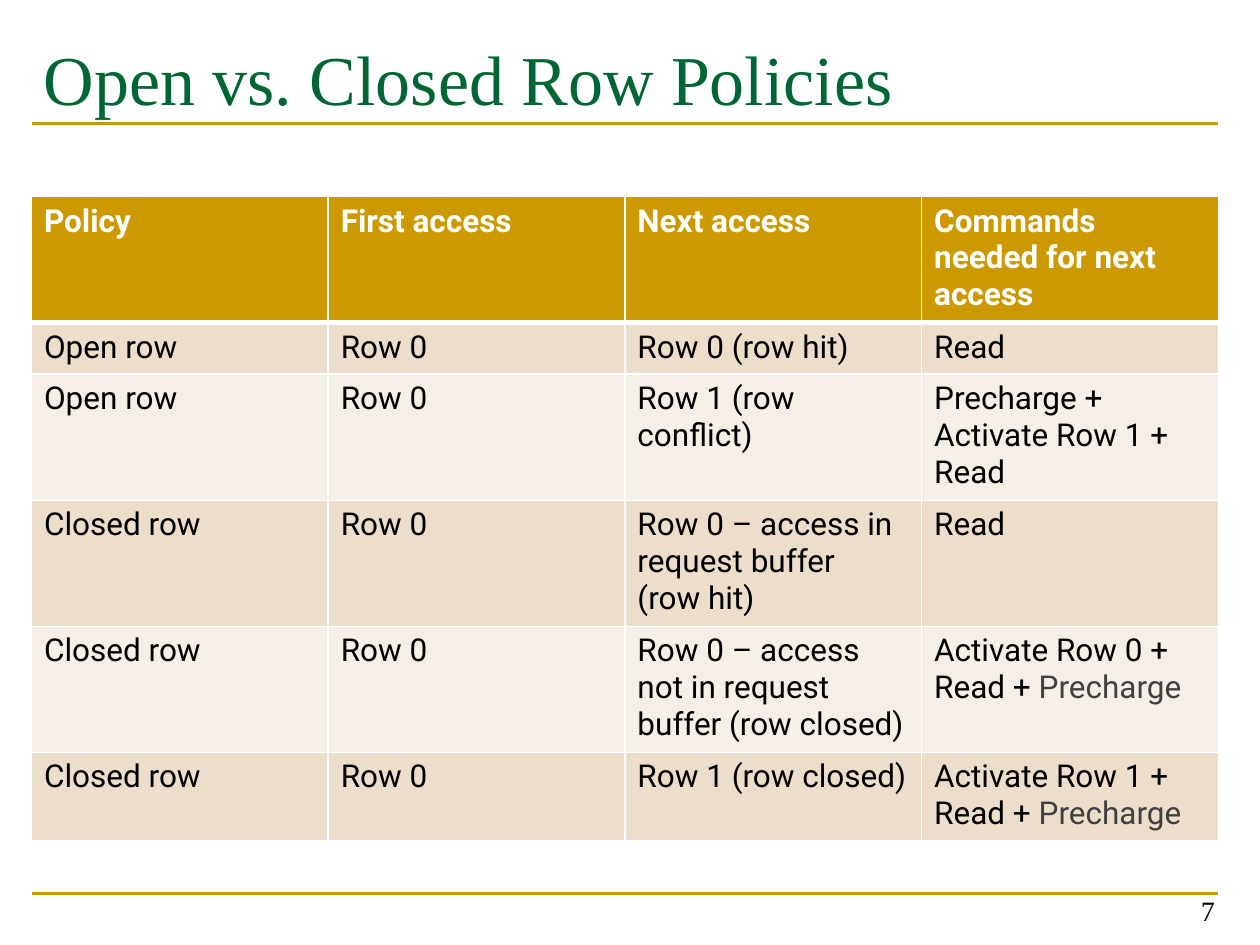
"""Build a slide with a table comparing open and closed row policies."""
from lxml import etree
from pptx import Presentation
from pptx.dml.color import RGBColor
from pptx.enum import shapes, text
from pptx.oxml import ns
from pptx.util import Inches, Pt

GOLD, GREEN, WHITE, BLACK, GRAY = "CC9900", "006633", "FFFFFF", "000000", "404040"
BANDS = ["ECDECB", "F6EFE7"]
LATE = "Precharge"


def style(font, name, size, color, bold=False):
    font.name, font.size, font.bold = name, Pt(size), bold
    font.color.rgb = RGBColor.from_string(color)


def edge(cell, side, width):
    line = etree.SubElement(cell._tc.get_or_add_tcPr(), ns.qn("a:" + side), w=str(Pt(width)))
    fill = etree.SubElement(line, ns.qn("a:solidFill"))
    etree.SubElement(fill, ns.qn("a:srgbClr"), val=WHITE)


deck = Presentation()
deck.slide_width, deck.slide_height = Inches(10), Inches(7.5)
slide = deck.slides.add_slide(deck.slide_layouts[6])

for y in (7.09, 0.98):
    rule = slide.shapes.add_connector(
        shapes.MSO_CONNECTOR.STRAIGHT, Inches(0.25), Inches(y), Inches(9.67), Inches(y))
    rule.line.color.rgb = RGBColor.from_string(GOLD)
    rule.line.width = Pt(1.5)
    etree.SubElement(rule._element.spPr, ns.qn("a:effectLst"))

labels = [
    ("Open vs. Closed Row Policies", (0.25, 0.17, 9.42, 1.17), 40, GREEN,
     text.PP_ALIGN.LEFT, text.MSO_ANCHOR.TOP, 0.11),
    ("7", (7.41, 6.91, 2.33, 0.5), 16, BLACK,
     text.PP_ALIGN.RIGHT, text.MSO_ANCHOR.BOTTOM, 0.05),
]
for words, place, size, color, align, anchor, top in labels:
    frame = slide.shapes.add_textbox(*map(Inches, place)).text_frame
    frame.word_wrap = True
    frame.vertical_anchor = anchor
    frame.margin_top = Inches(top)
    para = frame.paragraphs[0]
    para.text, para.alignment = words, align
    style(para.font, "Times New Roman", size, color)

rows = [
    ("Policy", "First access", "Next access", "Commands needed for next access"),
    ("Open row", "Row 0", "Row 0 (row hit)", "Read"),
    ("Open row", "Row 0", "Row 1 (row conflict)", "Precharge + Activate Row 1 +\nRead"),
    ("Closed row", "Row 0", "Row 0 – access in request buffer\n(row hit)", "Read"),
    ("Closed row", "Row 0", "Row 0 – access not in request buffer (row closed)",
     "Activate Row 0 + Read + "),
    ("Closed row", "Row 0", "Row 1 (row closed)", "Activate Row 1 + Read + "),
]
highs = [1, 0.41, 1, 1, 1, 0.7]
table = slide.shapes.add_table(
    len(rows), 4, Inches(0.25), Inches(1.56), Inches(9.42), Inches(sum(highs))).table

for r, (row, high) in enumerate(zip(rows, highs)):
    table.rows[r].height = Inches(high)
    head = r == 0
    for c, words in enumerate(row):
        cell = table.cell(r, c)
        cell.text = words
        for para in cell.text_frame.paragraphs:
            style(para.font, "Roboto", 18, WHITE if head else BLACK, head)
        if words.endswith("+ "):
            run = para.add_run()
            run.text = LATE
            run.font.color.rgb = RGBColor.from_string(GRAY)
        for side, width in (("lnL", 1), ("lnR", 1), ("lnT", 3 if r == 1 else 1),
                            ("lnB", 3 if head else 1)):
            edge(cell, side, width)
        cell.fill.solid()
        cell.fill.fore_color.rgb = RGBColor.from_string(GOLD if head else BANDS[(r - 1) % 2])

deck.save("out.pptx")
